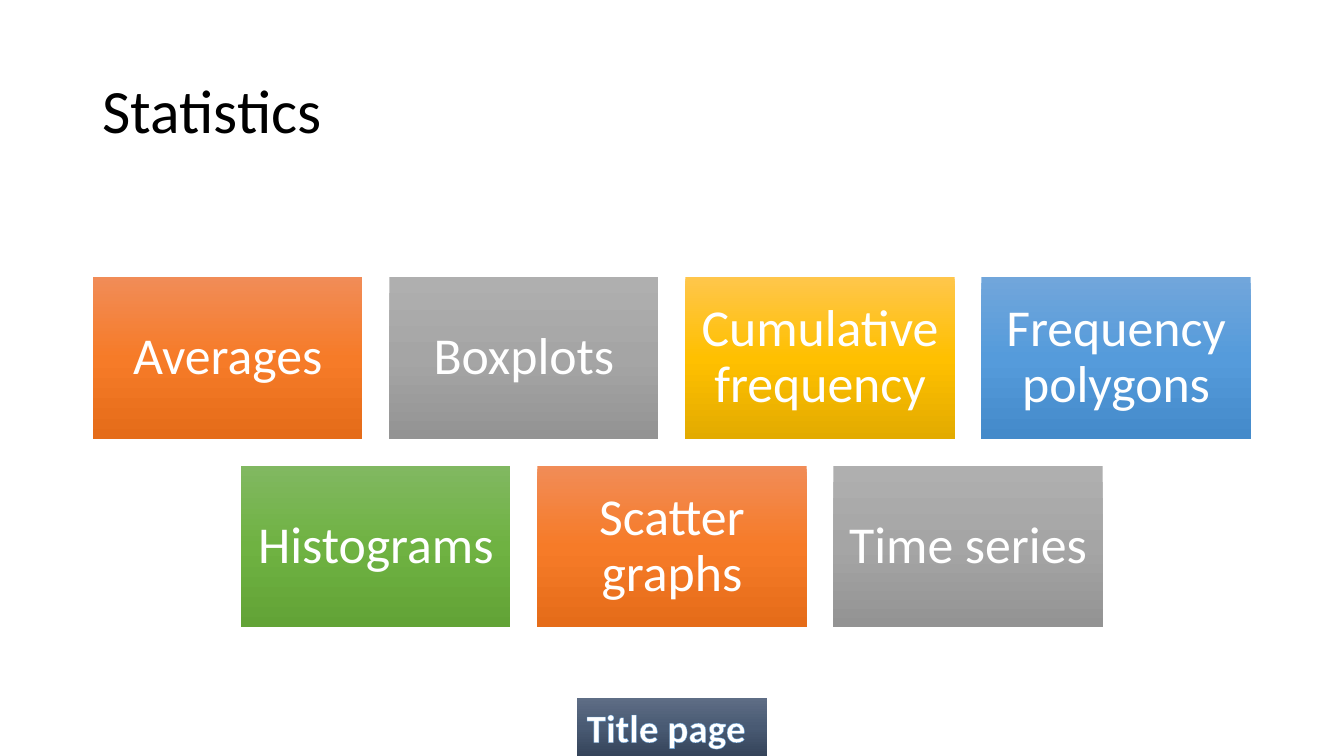
"""Build the Statistics menu slide with its gradient topic tiles."""
from copy import deepcopy

from lxml import etree
from pptx import Presentation
from pptx.dml.color import RGBColor
from pptx.enum import shapes, text
from pptx.oxml import parse_xml
from pptx.oxml.ns import nsdecls
from pptx.util import Pt

ORANGE = ("F18C57", "F67B28", "E56C19")
GREY = ("AFAFAF", "A5A5A5", "939393")
GOLD = ("FFC64B", "FFC000", "E3AB00")
BLUE = ("71A6DB", "559BDB", "448ACA")
GREEN = ("81B861", "6FB242", "62A336")
NAVY = ("5E6D85", "495A73", "35445A")


def write(box, wording, size, color, align, spacing):
    """Write one run into the box and return it."""
    para = box.text_frame.paragraphs[0]
    para.alignment = align
    para.line_spacing = spacing
    span = para.add_run()
    span.text = wording
    span.font.name = "Calibri"
    span.font.size = Pt(size)
    span.font.color.rgb = RGBColor.from_string(color)
    return span


def add_tile(page, left, top, width, height, colors):
    """Add a borderless rectangle with a three-stop vertical gradient."""
    box = page.shapes.add_shape(shapes.MSO_SHAPE.RECTANGLE,
                                Pt(left), Pt(top), Pt(width), Pt(height))
    box.shadow.inherit = False
    box.line.fill.background()
    box.fill.gradient()
    box.fill.gradient_angle = 270
    stop_list = box.element.spPr.xpath(".//a:gsLst")[0]
    stop_list.insert(1, deepcopy(stop_list[0]))
    for stop, position, color in zip(box.fill.gradient_stops, (0, 0.5, 1), colors):
        stop.position = position
        stop.color.rgb = RGBColor.from_string(color)
    return box


deck = Presentation()
deck.slide_width, deck.slide_height = Pt(960), Pt(540)
page = deck.slides.add_slide(deck.slide_layouts[5])

title = page.shapes.title
title.left, title.top, title.width, title.height = Pt(66), Pt(28.75), Pt(828), Pt(104.4)
title.text_frame.vertical_anchor = text.MSO_ANCHOR.MIDDLE
write(title, "Statistics", 44, "000000", text.PP_ALIGN.LEFT, 0.9)

rows = [
    [("Averages", ORANGE), ("Boxplots", GREY),
     ("Cumulative frequency", GOLD), ("Frequency polygons", BLUE)],
    [("Histograms", GREEN), ("Scatter graphs", ORANGE), ("Time series", GREY)],
]
tile_width, tile_height, gap = 192.3, 115.4, 19.2
for row_index, row in enumerate(rows):
    row_left = (960 - len(row) * (tile_width + gap) + gap) / 2
    row_top = 198 + row_index * (tile_height + gap)
    for column, (topic, colors) in enumerate(row):
        tile = add_tile(page, row_left + column * (tile_width + gap), row_top,
                        tile_width, tile_height, colors)
        frame = tile.text_frame
        frame.word_wrap = True
        frame.vertical_anchor = text.MSO_ANCHOR.MIDDLE
        frame.margin_left = frame.margin_right = Pt(10.5)
        frame.margin_top = frame.margin_bottom = Pt(10.5)
        write(tile, topic, 37, "FFFFFF", text.PP_ALIGN.CENTER, 0.9)

button = add_tile(page, 412, 498.8, 136, 41.2, NAVY)
button.text_frame.word_wrap = True
button.text_frame.vertical_anchor = text.MSO_ANCHOR.TOP
button.text_frame.auto_size = text.MSO_AUTO_SIZE.SHAPE_TO_FIT_TEXT
label = write(button, "Title page", 28, "FFFFFF", text.PP_ALIGN.LEFT, 1.0)
label.font.bold = True
outline = parse_xml(f'<a:ln {nsdecls("a")} w="{Pt(0.8)}"/>')
fill = etree.SubElement(outline, "{%s}solidFill" % outline.nsmap["a"])
etree.SubElement(fill, "{%s}srgbClr" % outline.nsmap["a"], val="5B9BD5")
label.font.fill
label.text
button.element.xpath(".//a:rPr")[0].insert(0, outline)

deck.save("out.pptx")
